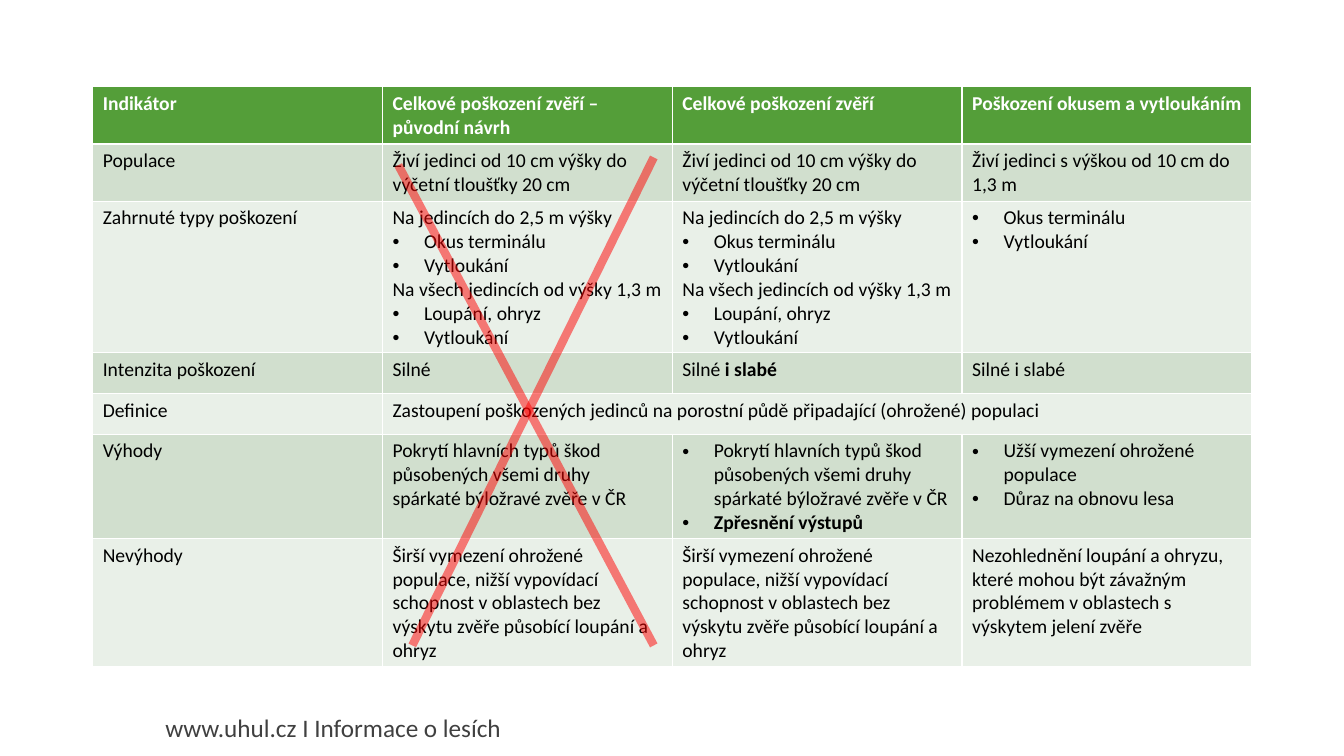
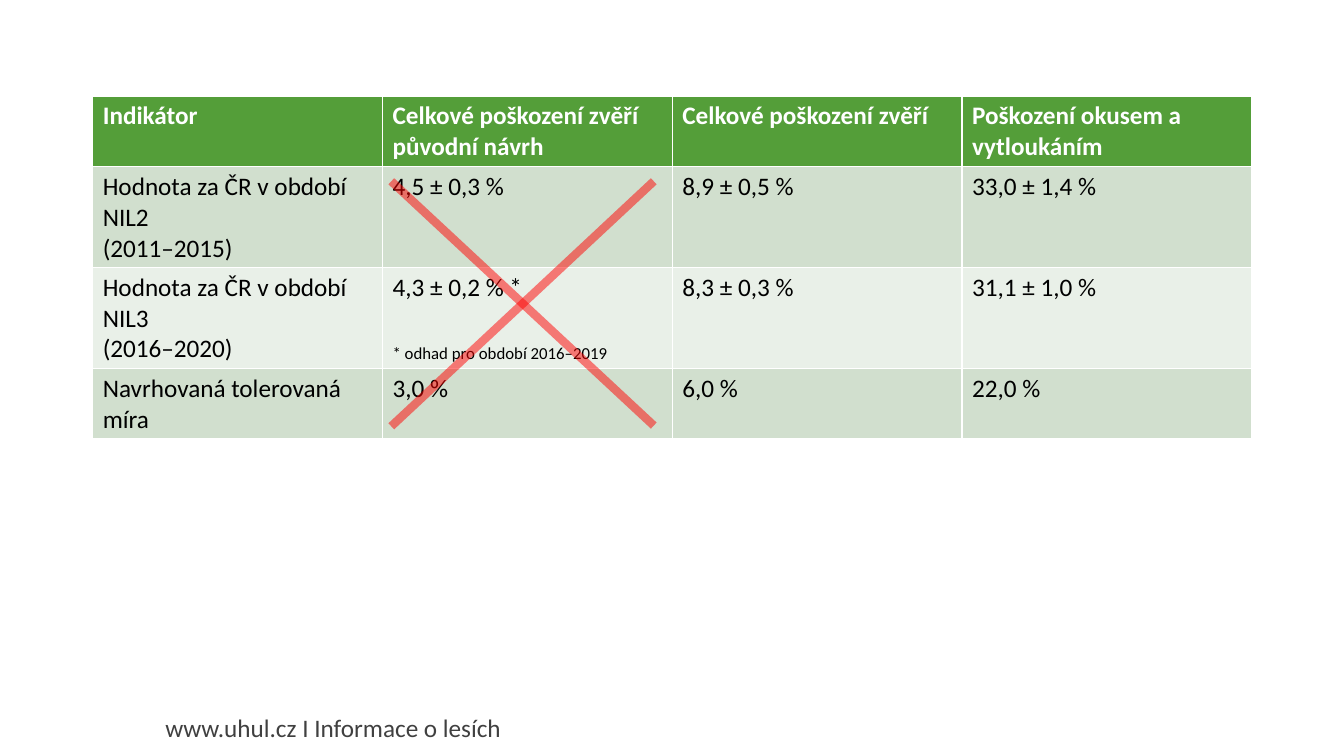
from dataclasses import dataclass

from lxml.etree import SubElement
from pptx import Presentation
from pptx.dml.color import RGBColor
from pptx.enum.shapes import MSO_CONNECTOR as Connector
from pptx.oxml.ns import qn
from pptx.util import Pt


@dataclass(frozen=True)
class Theme:
    font: str = "Calibri"
    header: RGBColor = RGBColor(0x54, 0x9E, 0x39)
    bands: tuple = (RGBColor(0xD1, 0xDF, 0xCE), RGBColor(0xE9, 0xF0, 0xE8))
    header_text: RGBColor = RGBColor(0xFF, 0xFF, 0xFF)
    text: RGBColor = RGBColor(0, 0, 0)
    footer_text: RGBColor = RGBColor(0x40, 0x40, 0x40)
    cross: RGBColor = RGBColor(0xFF, 0, 0)
    small: int = 12
    compact: int = 14
    regular: int = 18


@dataclass(frozen=True)
class Line:
    """One paragraph of a cell; strong is the bold text that ends it."""
    text: str = ""
    strong: str = ""
    bullet: bool = False
    size: int = 0
    before: int = 0


def bullets(*texts):
    return [Line(text, bullet=True) for text in texts]


class Deck:
    LEFT, COLUMN, ROW, INDENT = 66.25, 207, 29.2, 22.5

    def __init__(self, theme):
        self.theme = theme
        self.file = Presentation()
        self.file.slide_width, self.file.slide_height = Pt(960), Pt(540)
        self.slide = None

    def add_slide(self):
        self.slide = self.file.slides.add_slide(self.file.slide_layouts[6])
        self.footer("www.uhul.cz I Informace o lesích")

    def style(self, paragraph, size, color, bold=None):
        font = paragraph.font
        font.name, font.size, font.bold = self.theme.font, Pt(size), bold
        font.color.rgb = color

    def footer(self, text):
        frame = self.slide.shapes.add_textbox(
            Pt(111), Pt(507.5), Pt(448.5), Pt(29)).text_frame
        frame.word_wrap = True
        paragraph = frame.paragraphs[0]
        paragraph.text = text
        paragraph.line_spacing = 0.9
        self.style(paragraph, self.theme.regular, self.theme.footer_text)

    def table(self, top, size, rows):
        """Fill a table; None joins a cell to the one on its left."""
        theme, columns = self.theme, len(rows[0])
        table = self.slide.shapes.add_table(
            len(rows), columns, Pt(self.LEFT), Pt(top),
            Pt(self.COLUMN * columns), Pt(self.ROW * len(rows))).table
        for column in table.columns:
            column.width = Pt(self.COLUMN)
        for r, row in enumerate(rows):
            table.rows[r].height = Pt(self.ROW)
            for c, content in enumerate(row):
                cell = table.cell(r, c)
                cell.fill.solid()
                cell.fill.fore_color.rgb = (
                    theme.bands[(r - 1) % 2] if r else theme.header)
                if content is not None:
                    self.fill_cell(cell, content, size, is_header=r == 0)
            if None in row:
                start = row.index(None) - 1
                table.cell(r, start).merge(table.cell(r, columns - 1))

    def fill_cell(self, cell, content, size, is_header):
        lines = [Line(content)] if isinstance(content, str) else content
        color = self.theme.header_text if is_header else self.theme.text
        frame = cell.text_frame
        for i, line in enumerate(lines):
            paragraph = frame.add_paragraph() if i else frame.paragraphs[0]
            if line.before:
                paragraph.space_before = Pt(line.before)
            if line.bullet:
                self.add_bullet(paragraph)
            self.style(paragraph, line.size or size, color, is_header)
            if line.text:
                paragraph.add_run().text = line.text
            if line.strong:
                run = paragraph.add_run()
                run.text, run.font.bold = line.strong, True

    def add_bullet(self, paragraph):
        properties = paragraph._p.get_or_add_pPr()
        properties.set("marL", str(Pt(self.INDENT)))
        properties.set("indent", str(-Pt(self.INDENT)))
        SubElement(properties, qn("a:buFont")).set("typeface", "Arial")
        SubElement(properties, qn("a:buChar")).set("char", "•")

    def cross_out(self, *strokes):
        """Draw half-transparent strokes, each given as x1, y1, x2, y2."""
        for stroke in strokes:
            connector = self.slide.shapes.add_connector(
                Connector.STRAIGHT, *(Pt(length) for length in stroke))
            connector.line.width = Pt(6)
            connector.line.color.rgb = self.theme.cross
            properties = connector._element.spPr
            color = properties.find(".//" + qn("a:srgbClr"))
            SubElement(color, qn("a:alpha")).set("val", "50000")
            SubElement(properties, qn("a:effectLst"))


def main():
    theme = Theme()
    deck = Deck(theme)

    population = "Živí jedinci od 10 cm výšky do výčetní tloušťky 20 cm"
    browsing = bullets("Okus terminálu", "Vytloukání")
    damage_types = [
        Line("Na jedincích do 2,5 m výšky"), *browsing,
        Line("Na všech jedincích od výšky 1,3 m"),
        *bullets("Loupání, ohryz", "Vytloukání"),
    ]
    coverage = ("Pokrytí hlavních typů škod působených všemi druhy "
                "spárkaté býložravé zvěře v ČR")
    drawback = ("Širší vymezení ohrožené populace, nižší vypovídací schopnost "
                "v oblastech bez výskytu zvěře působící loupání a ohryz")
    total, partial = "Celkové poškození zvěří", "Poškození okusem a vytloukáním"

    deck.add_slide()
    deck.table(62, theme.compact, [
        ["Indikátor", f"{total} – původní návrh", total, partial],
        ["Populace", population, population,
         "Živí jedinci s výškou od 10 cm do 1,3 m"],
        ["Zahrnuté typy poškození", damage_types, damage_types, browsing],
        ["Intenzita poškození", "Silné", [Line("Silné ", strong="i slabé")],
         "Silné i slabé"],
        ["Definice", "Zastoupení poškozených jedinců na porostní půdě "
         "připadající (ohrožené) populaci", None, None],
        ["Výhody", coverage,
         [*bullets(coverage), Line(strong="Zpřesnění výstupů", bullet=True)],
         bullets("Užší vymezení ohrožené populace", "Důraz na obnovu lesa")],
        ["Nevýhody", drawback, drawback,
         "Nezohlednění loupání a ohryzu, které mohou být závažným problémem "
         "v oblastech s výskytem jelení zvěře"],
    ])
    deck.cross_out((284.5, 118, 467, 461), (467, 112.5, 294.5, 461))

    deck.add_slide()
    deck.table(68.5, theme.regular, [
        ["Indikátor", f"{total} původní návrh", total, partial],
        [[Line("Hodnota za ČR v období NIL2"), Line("(2011–2015)")],
         "4,5 ± 0,3 %", "8,9 ± 0,5 %", "33,0 ± 1,4 %"],
        [[Line("Hodnota za ČR v období NIL3"), Line("(2016–2020)")],
         [Line("4,3 ± 0,2 % *"),
          Line("* odhad pro období 2016–2019", size=theme.small, before=29)],
         "8,3 ± 0,3 %", "31,1 ± 1,0 %"],
        ["Navrhovaná tolerovaná míra", "3,0 %", "6,0 %", "22,0 %"],
    ])
    deck.cross_out((467, 129.5, 279.5, 304.5), (279.5, 129.5, 467, 304))

    deck.file.save("out.pptx")


if __name__ == "__main__":
    main()
